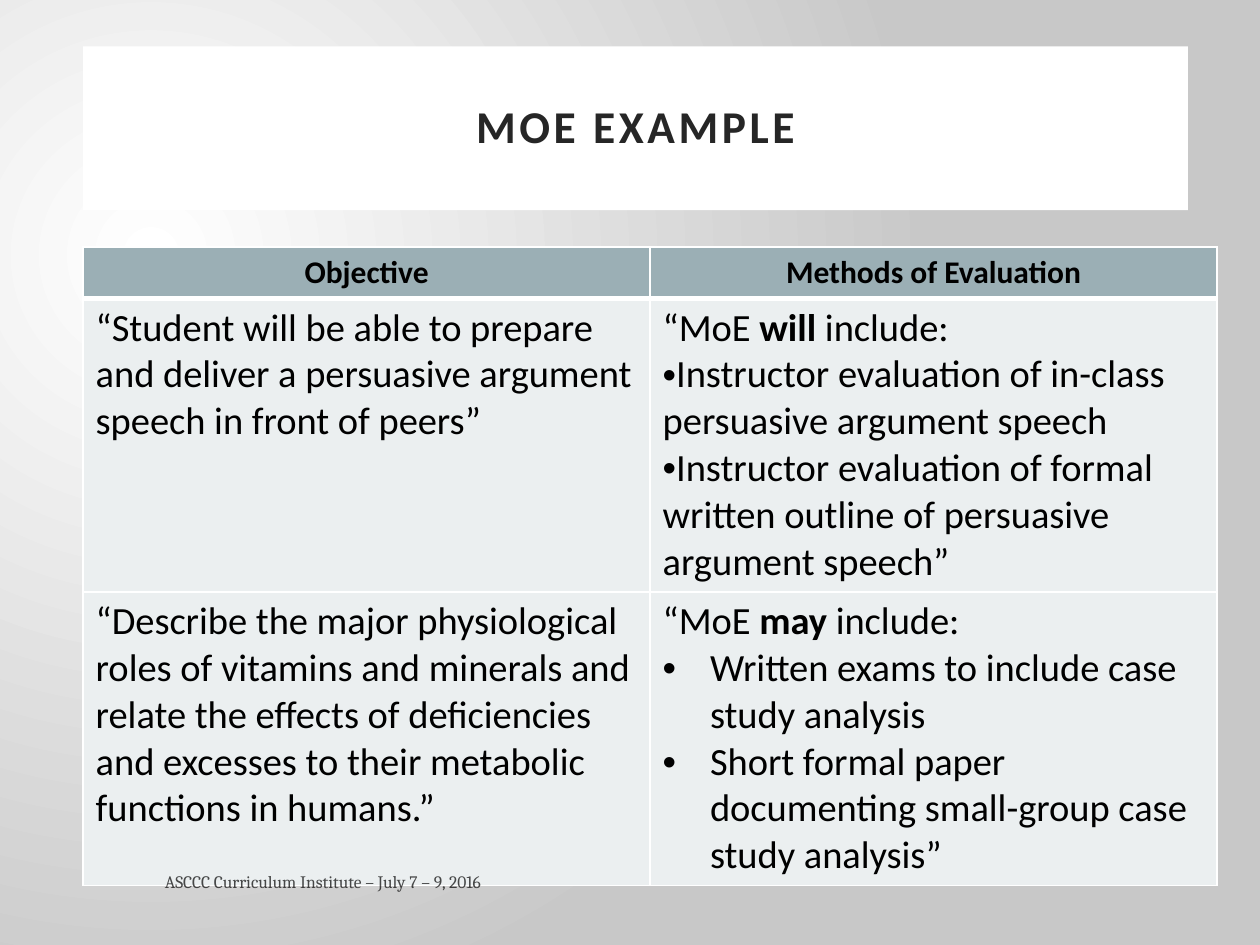
from dataclasses import dataclass

from pptx import Presentation
from pptx.dml.color import RGBColor as RGB
from pptx.enum.shapes import MSO_SHAPE as Shape
from pptx.enum.text import MSO_ANCHOR as Anchor, PP_ALIGN as Align
from pptx.oxml.ns import qn
from pptx.util import Pt
from lxml.etree import SubElement as sub


@dataclass(frozen=True)
class Theme:
    sans: str = "Calibri"
    serif: str = "Cambria"
    white: str = "FFFFFF"
    edge: str = "C8C8C8"
    ink: str = "000000"
    dark: str = "262626"
    head: str = "9BAFB5"
    body: str = "EBEFF0"
    title: int = 26
    label: int = 18
    text: int = 22
    foot: int = 10


@dataclass(frozen=True)
class Para:
    words: tuple[str, ...]  # every second entry is bold
    hang: float = 0
    dot: bool = False


@dataclass(frozen=True)
class Row:
    height: float
    cells: tuple[tuple[Para, ...], ...]
    head: bool = False


T = Theme()
HANG = 27

ROWS = (
    Row(29.3, ((Para(("Objective",)),),
               (Para(("Methods of Evaluation",)),)), True),
    Row(167.6, (
        (Para(("“Student will be able to prepare and deliver a persuasive "
               "argument speech in front of peers”",)),),
        (Para(("“MoE ", "will", " include:")),
         Para(("Instructor evaluation of in-class persuasive argument "
               "speech",), dot=True),
         Para(("Instructor evaluation of formal written outline of "
               "persuasive argument speech”",), dot=True)))),
    Row(167.6, (
        (Para(("“Describe the major physiological roles of vitamins and "
               "minerals and relate the effects of deficiencies and excesses "
               "to their metabolic functions in humans.”",)),),
        (Para(("“MoE ", "may", " include:"), HANG),
         Para(("Written exams to include case study analysis",), HANG, True),
         Para(("Short formal paper documenting small-group case study "
               "analysis”",), HANG, True)))),
)


def style(font, face: str, size: float, color: str, bold: bool = False) -> None:
    font.name, font.size, font.bold = face, Pt(size), bold
    font.color.rgb = RGB.from_string(color)


def glow(slide) -> None:
    fill = slide.background.fill
    fill.gradient()
    for stop, color, at in zip(fill.gradient_stops, (T.white, T.edge), (0, 1)):
        stop.color.rgb = RGB.from_string(color)
        stop.position = at
    grad = slide.element.find(".//" + qn("a:gradFill"))
    grad.remove(grad.find(qn("a:lin")))
    ring = sub(grad, qn("a:path"), {"path": "circle"})
    sub(ring, qn("a:fillToRect"), l="50000", t="55000", r="125000", b="100000")


def write(para, item: Para, head: bool) -> None:
    props = para._p.get_or_add_pPr()
    props.set("marL", str(Pt(item.hang)))
    props.set("indent", str(Pt(-item.hang)))
    if item.dot:
        sub(props, qn("a:buFont"), typeface="Arial")
        sub(props, qn("a:buChar"), char="•")
    para.alignment = Align.CENTER if head else Align.LEFT
    for i, word in enumerate(item.words):
        run = para.add_run()
        run.text = word
        style(run.font, T.sans, T.label if head else T.text, T.ink,
              head or i % 2 == 1)


def border(cell, side: str, width: float) -> None:
    line = sub(cell._tc.get_or_add_tcPr(), qn("a:ln" + side), w=str(Pt(width)))
    sub(sub(line, qn("a:solidFill")), qn("a:srgbClr"), val=T.white)


def draw_cell(cell, items: tuple[Para, ...], row: Row, below: bool) -> None:
    for side in "LRTB":
        thick = (side == "B" and row.head) or (side == "T" and below)
        border(cell, side, 3 if thick else 1)
    cell.fill.solid()
    cell.fill.fore_color.rgb = RGB.from_string(T.head if row.head else T.body)
    frame = cell.text_frame
    for i, item in enumerate(items):
        para = frame.add_paragraph() if i else frame.paragraphs[0]
        write(para, item, row.head)


def draw_table(slide, rows: tuple[Row, ...]) -> None:
    high = sum(row.height for row in rows)
    grid = slide.shapes.add_table(len(rows), 2, Pt(47.5), Pt(141.1),
                                  Pt(648), Pt(high)).table
    grid.first_row = grid.horz_banding = False
    for r, row in enumerate(rows):
        grid.rows[r].height = Pt(row.height)
        for c, items in enumerate(row.cells):
            draw_cell(grid.cell(r, c), items, row, r > 0 and rows[r - 1].head)


def draw_title(slide, text: str) -> None:
    box = slide.shapes.add_shape(Shape.RECTANGLE, Pt(47.5), Pt(26.6),
                                 Pt(631.4), Pt(93.6))
    box.shadow.inherit = False
    box.fill.solid()
    box.fill.fore_color.rgb = RGB.from_string(T.white)
    box.line.fill.background()
    frame = box.text_frame
    frame.text = text
    frame.vertical_anchor = Anchor.MIDDLE
    para = frame.paragraphs[0]
    para.alignment, para.line_spacing = Align.CENTER, 0.9
    run = para.runs[0]
    style(run.font, T.sans, T.title, T.dark, True)
    run._r.get_or_add_rPr().set("spc", "200")


def draw_foot(slide, text: str) -> None:
    box = slide.shapes.add_textbox(Pt(87.1), Pt(491), Pt(358.6), Pt(25.2))
    frame = box.text_frame
    frame.word_wrap = True
    frame.vertical_anchor = Anchor.MIDDLE
    frame.text = text
    run = frame.paragraphs[0].runs[0]
    style(run.font, T.serif, T.foot, T.ink)
    sub(run._r.find(".//" + qn("a:srgbClr")), qn("a:alpha"), val="70000")


def main() -> None:
    deck = Presentation()
    deck.slide_width, deck.slide_height = Pt(720), Pt(540)
    slide = deck.slides.add_slide(deck.slide_layouts[6])

    # Background and title band
    glow(slide)
    draw_title(slide, "MOE EXAMPLE")

    # Objectives with their methods, then the footer on top
    draw_table(slide, ROWS)
    draw_foot(slide, "ASCCC Curriculum Institute – July 7 – 9, 2016")

    deck.save("out.pptx")


if __name__ == "__main__":
    main()
